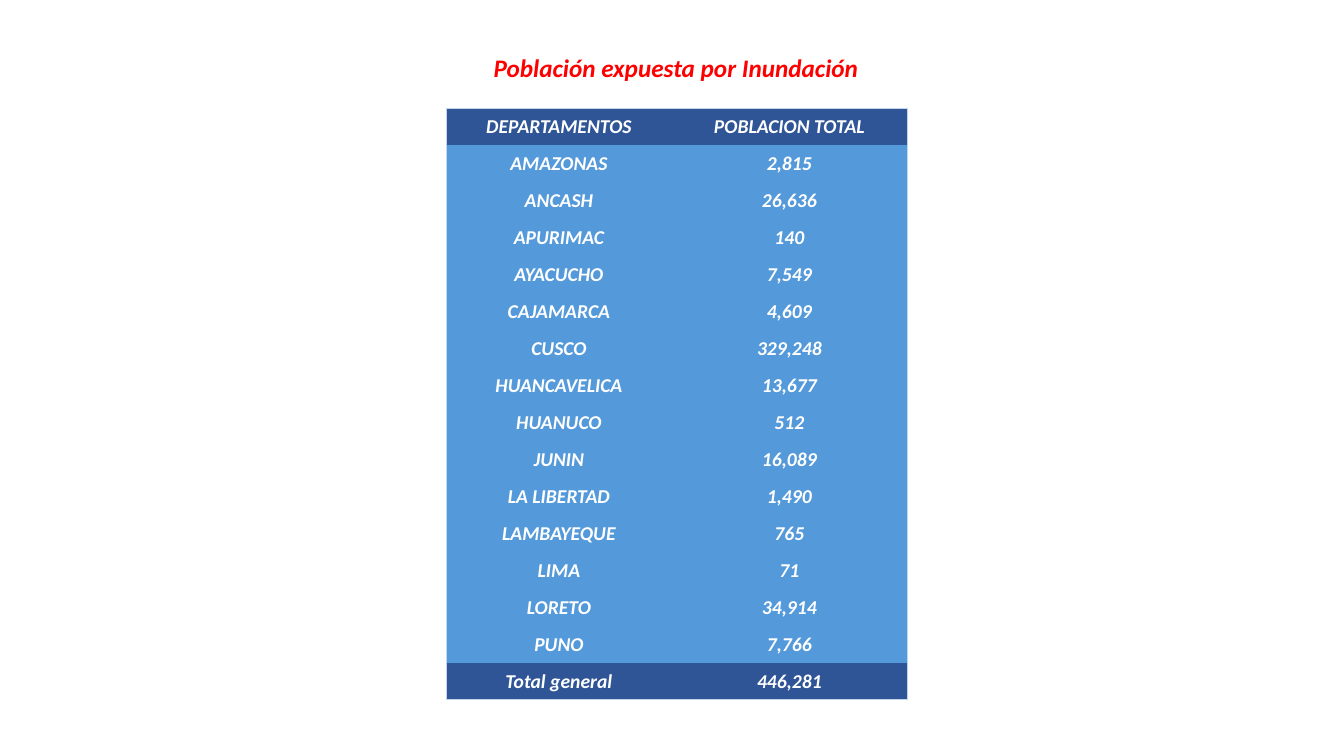
"""Build a slide with a table of the population exposed to floods by department."""
from lxml import etree
from pptx import Presentation
from pptx.dml.color import RGBColor
from pptx.enum.text import MSO_ANCHOR, MSO_AUTO_SIZE, PP_ALIGN
from pptx.oxml.ns import qn
from pptx.util import Emu, Pt

CENTER = PP_ALIGN.CENTER
MIDDLE = MSO_ANCHOR.MIDDLE
NO_AUTO_SIZE = MSO_AUTO_SIZE.NONE

TITLE = "Población expuesta por Inundación"
ROWS = [
    ("DEPARTAMENTOS", "POBLACION TOTAL"),
    ("AMAZONAS", "2,815"),
    ("ANCASH", "26,636"),
    ("APURIMAC", "140"),
    ("AYACUCHO", "7,549"),
    ("CAJAMARCA", "4,609"),
    ("CUSCO", "329,248"),
    ("HUANCAVELICA", "13,677"),
    ("HUANUCO", "512"),
    ("JUNIN", "16,089"),
    ("LA LIBERTAD", "1,490"),
    ("LAMBAYEQUE", "765"),
    ("LIMA", "71"),
    ("LORETO", "34,914"),
    ("PUNO", "7,766"),
    ("Total general", "446,281"),
]
FONT = "Calibri"
TITLE_COLOR, TEXT_COLOR = "FF0000", "FFFFFF"
BAND_COLOR, BODY_COLOR, BORDER_COLOR = "2F5597", "5499DA", "C4D5EB"
NO_STYLE = "{2D5ABB26-0587-4C30-8999-92F81FD0307C}"

SLIDE_WIDTH, SLIDE_HEIGHT = 1344, 756
TITLE_BOX = (482, 47, 388, 40)
TABLE_LEFT, TABLE_TOP = 446, 108
COLUMN_WIDTHS = (226, 235)
ROW_HEIGHT = 37


def px(length):
    return Emu(round(length * 914400 / 100.8))


def color(value):
    return RGBColor.from_string(value)


def format_text(paragraph, size, text_color):
    paragraph.alignment = CENTER
    font = paragraph.font
    font.name, font.size, font.bold, font.italic = FONT, Pt(size), True, True
    font.color.rgb = color(text_color)


def add_border(cell, side):
    properties = cell._tc.get_or_add_tcPr()
    line = etree.SubElement(properties, qn(f"a:ln{side}"), w=str(Pt(0.5)))
    fill = etree.SubElement(line, qn("a:solidFill"))
    etree.SubElement(fill, qn("a:srgbClr"), val=BORDER_COLOR)


def add_title(slide):
    title = slide.shapes.title
    title.left, title.top, title.width, title.height = map(px, TITLE_BOX)
    frame = title.text_frame
    frame.text = TITLE
    frame.word_wrap = False
    frame.auto_size = NO_AUTO_SIZE
    frame.vertical_anchor = MIDDLE
    format_text(frame.paragraphs[0], 18, TITLE_COLOR)


def add_population_table(slide):
    last_row, last_column = len(ROWS) - 1, len(COLUMN_WIDTHS) - 1
    table = slide.shapes.add_table(
        len(ROWS), len(COLUMN_WIDTHS), px(TABLE_LEFT), px(TABLE_TOP),
        px(sum(COLUMN_WIDTHS)), px(ROW_HEIGHT * len(ROWS))).table
    table._tbl.tblPr.find(qn("a:tableStyleId")).text = NO_STYLE
    table.horz_banding = False
    for column, width in zip(table.columns, COLUMN_WIDTHS):
        column.width = px(width)
    for row_index, values in enumerate(ROWS):
        table.rows[row_index].height = px(ROW_HEIGHT)
        for column_index, value in enumerate(values):
            cell = table.cell(row_index, column_index)
            cell.text = value
            cell.vertical_anchor = MIDDLE
            cell.margin_left = cell.margin_right = cell.margin_top = px(1)
            cell.margin_bottom = 0
            format_text(cell.text_frame.paragraphs[0], 14, TEXT_COLOR)
            outer_sides = {"L": column_index == 0, "R": column_index == last_column,
                           "T": row_index == 0, "B": row_index == last_row}
            for side, is_outer in outer_sides.items():
                if is_outer:
                    add_border(cell, side)
            cell.fill.solid()
            is_band = row_index in (0, last_row)
            cell.fill.fore_color.rgb = color(BAND_COLOR if is_band else BODY_COLOR)


def main():
    presentation = Presentation()
    presentation.slide_width, presentation.slide_height = px(SLIDE_WIDTH), px(SLIDE_HEIGHT)
    slide = presentation.slides.add_slide(presentation.slide_layouts.get_by_name("Title Only"))
    add_title(slide)
    add_population_table(slide)
    presentation.save("out.pptx")


if __name__ == "__main__":
    main()
